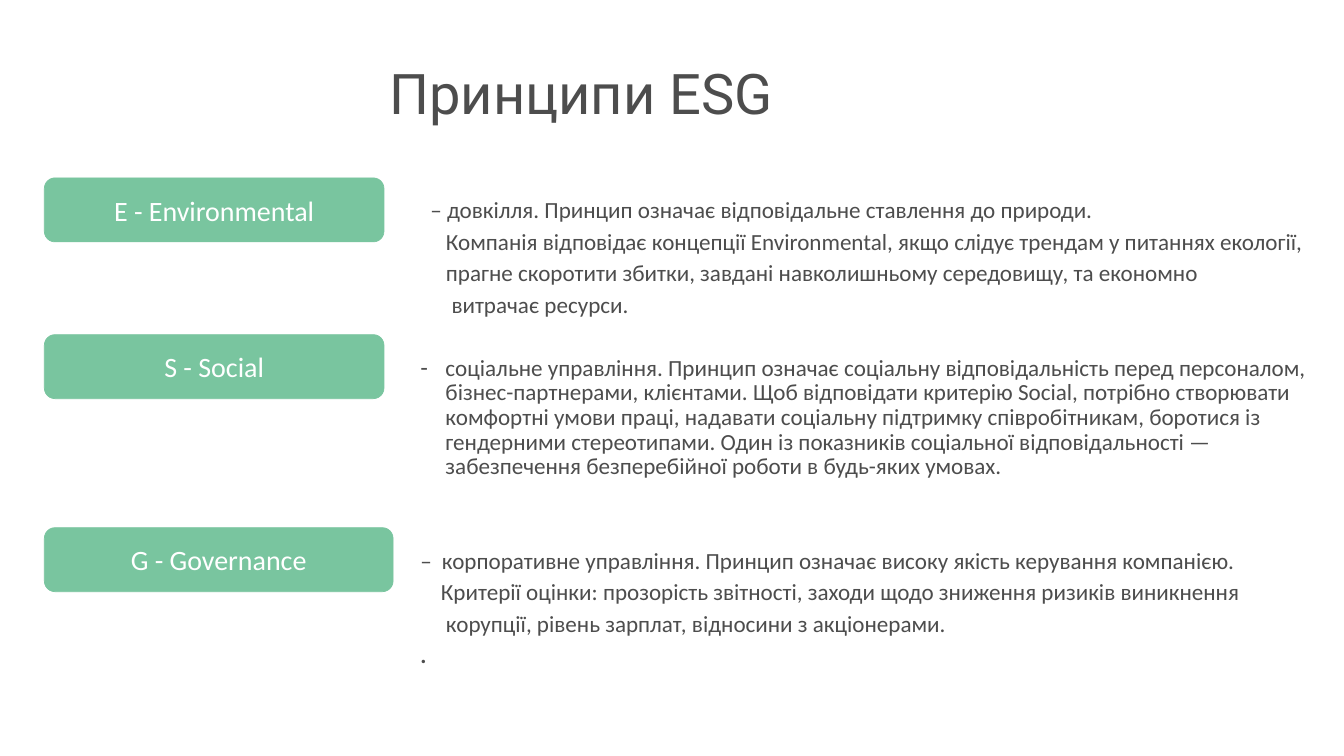
from dataclasses import dataclass

from pptx import Presentation
from pptx.dml.color import RGBColor as RGB
from pptx.enum.shapes import MSO_SHAPE as Shape
from pptx.enum.text import MSO_ANCHOR as Anchor, MSO_AUTO_SIZE as Fit, PP_ALIGN as Align
from pptx.oxml.ns import qn
from pptx.util import Inches, Pt
from lxml.etree import SubElement


@dataclass(frozen=True)
class Theme:
    ink: RGB = RGB(0x4D, 0x4D, 0x4D)
    green: RGB = RGB(0x79, 0xC5, 0x9F)
    white: RGB = RGB(0xFF, 0xFF, 0xFF)
    head: str = "Roboto"
    text: str = "Calibri"
    title: int = 80
    label: int = 40
    body: int = 33
    line: int = 35
    gap: int = 10


THEME = Theme()
LEFT = 0.88
HIGH = 1.27

# label, top, width
LABELS = [
    ("E - Environmental", 3.53, 6.74),
    ("S - Social", 6.64, 6.74),
    ("G - Governance", 10.47, 6.92),
]

# text, left margin, first-line indent, bullet, space before in points
LINES = [
    ("– довкілля. Принцип означає відповідальне ставлення до природи.", 0.2, 0, None, 0),
    ("Компанія відповідає концепції Environmental, якщо слідує трендам у питаннях екології,",
     0.51, 0, None, THEME.gap),
    ("прагне скоротити збитки, завдані навколишньому середовищу, та економно",
     0.51, 0, None, THEME.gap),
    ("витрачає ресурси.", 0.62, 0, None, THEME.gap),
    ("соціальне управління. Принцип означає соціальну відповідальність перед персоналом, "
     "бізнес-партнерами, клієнтами. Щоб відповідати критерію Social, потрібно створювати "
     "комфортні умови праці, надавати соціальну підтримку співробітникам, боротися із "
     "гендерними стереотипами. Один із показників соціальної відповідальності — "
     "забезпечення безперебійної роботи в будь-яких умовах.", 0.5, -0.5, "-", 55),
    ("–\tкорпоративне управління. Принцип означає високу якість керування компанією.",
     0.43, -0.43, None, 100),
    ("Критерії оцінки: прозорість звітності, заходи щодо зниження ризиків виникнення",
     0.41, 0, None, THEME.gap),
    ("корупції, рівень зарплат, відносини з акціонерами.", 0.51, 0, None, THEME.gap),
    (".", 0, 0, None, THEME.gap),
]


def place(shape, box):
    shape.left, shape.top, shape.width, shape.height = map(Inches, box)


def style(par, face, size, color, align=Align.LEFT):
    par.alignment = align
    par.font.name = face
    par.font.size = Pt(size)
    par.font.color.rgb = color


def indent(par, left, first, mark):
    """Set the margins and the bullet, or none, of a paragraph."""
    props = par._p.get_or_add_pPr()
    props.set("marL", str(Inches(left)))
    props.set("indent", str(Inches(first)))
    if mark:
        SubElement(props, qn("a:buChar")).set("char", mark)
    else:
        SubElement(props, qn("a:buNone"))


def add_title(slide, box):
    title = slide.shapes.title
    place(title, box)
    frame = title.text_frame
    frame.text = "Принципи ESG"
    frame.auto_size = Fit.NONE
    frame.vertical_anchor = Anchor.TOP
    par = frame.paragraphs[0]
    par.line_spacing = 0.9
    style(par, THEME.head, THEME.title, THEME.ink)


def add_body(slide, box):
    body = slide.placeholders[1]
    place(body, box)
    frame = body.text_frame
    frame.word_wrap = True
    frame.auto_size = Fit.NONE
    frame.vertical_anchor = Anchor.TOP
    for i, (text, left, first, mark, before) in enumerate(LINES):
        par = frame.add_paragraph() if i else frame.paragraphs[0]
        par.text = text
        indent(par, left, first, mark)
        par.line_spacing = Pt(THEME.line)
        par.space_before = Pt(before)
        style(par, THEME.text, THEME.body, THEME.ink)
    par.font.bold = True


def add_label(slide, text, box):
    label = slide.shapes.add_shape(Shape.ROUNDED_RECTANGLE, *map(Inches, box))
    label.shadow.inherit = False
    label.fill.solid()
    label.fill.fore_color.rgb = THEME.green
    label.line.color.rgb = THEME.green
    label.line.width = Pt(1)
    frame = label.text_frame
    frame.text = text
    frame.vertical_anchor = Anchor.MIDDLE
    style(frame.paragraphs[0], THEME.text, THEME.label, THEME.white, Align.CENTER)


def main():
    deck = Presentation()
    deck.slide_width, deck.slide_height = Inches(26.67), Inches(15)
    slide = deck.slides.add_slide(deck.slide_layouts[1])
    add_body(slide, (8.24, 3.9, 17.89, 8.02))
    add_title(slide, (7.63, 1.26, 18.5, 2.12))
    for text, top, wide in LABELS:
        add_label(slide, text, (LEFT, top, wide, HIGH))
    deck.save("out.pptx")


if __name__ == "__main__":
    main()
